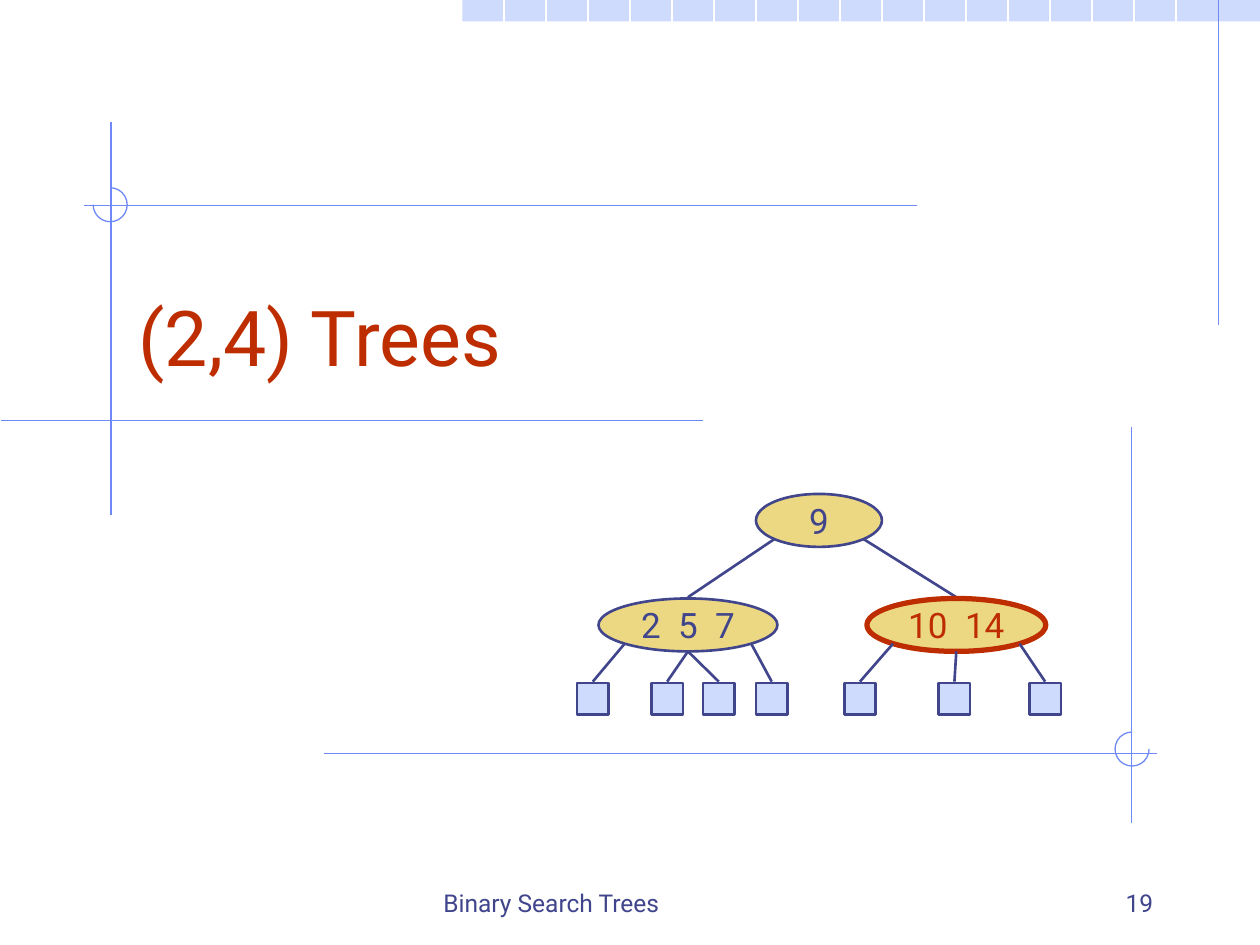
from dataclasses import dataclass
from math import cos, pi, sin

from lxml.etree import SubElement
from pptx import Presentation
from pptx.dml.color import RGBColor
from pptx.enum.shapes import MSO_CONNECTOR, MSO_SHAPE
from pptx.enum.text import MSO_ANCHOR, MSO_AUTO_SIZE, PP_ALIGN
from pptx.oxml.ns import qn
from pptx.shapes.autoshape import Shape
from pptx.slide import Slide
from pptx.text.text import Font
from pptx.util import Inches, Pt

FONT = "Roboto"
INK = "40458C"
RED = "BE2D00"
GOLD = "ECD882"
PALE = "CFDBFD"
BLUE = "6F89F7"
WHITE = "FFFFFF"
SLIDE_WIDTH = 10
SLIDE_HEIGHT = 7.5
GRID = 1 / 3
NODE_HEIGHT = 0.42
LEAF_SIZE = 0.25
LEAF_TOP = 5.42
LINK_GAP = 0.01


@dataclass
class Leaf:
    left: float
    side: int


@dataclass
class Node:
    keys: list[str]
    left: float
    top: float
    width: float
    leaves: list[Leaf]
    color: str = INK
    weight: float = 1.5

    @property
    def center(self) -> float:
        return self.left + self.width / 2

    def site(self, side: int) -> tuple[float, float]:
        angle = pi / 2 - side * pi / 4
        return (self.center + self.width / 2 * cos(angle),
                self.top + NODE_HEIGHT / 2 * (1 + sin(angle)))


@dataclass
class Rule:
    x1: float
    y1: float
    x2: float
    y2: float


@dataclass
class Arc:
    left: float
    top: float
    start: float
    end: float


@dataclass
class Footer:
    text: str
    left: float
    width: float
    align: PP_ALIGN


ROOT = Node(["9"], 6, 3.92, 1, [])
LEFT = Node(["2", "5", "7"], 4.75, 4.75, 1.42,
            [Leaf(4.58, -1), Leaf(5.17, 0), Leaf(5.58, 0), Leaf(6, 1)])
RIGHT = Node(["10", "14"], 6.88, 4.75, 1.42,
             [Leaf(6.7, -1), Leaf(7.45, 0), Leaf(8.17, 1)], RED, 3)
RULES = [
    Rule(9.67, 0, 9.67, 2.58),
    Rule(0.88, 0.97, 0.88, 4.09),
    Rule(5.58, 3.34, 0.01, 3.34),
    Rule(7.28, 1.63, 0.67, 1.63),
    Rule(2.57, 5.98, 9.18, 5.98),
    Rule(8.98, 3.39, 8.98, 6.53),
]
ARCS = [Arc(0.74, 1.49, 162, 108), Arc(8.85, 5.81, 0, 162)]
FOOTERS = [
    Footer("Binary Search Trees", 3.42, 3.17, PP_ALIGN.LEFT),
    Footer("19", 7.17, 2.08, PP_ALIGN.RIGHT),
]


def rgb(value: str) -> RGBColor:
    return RGBColor.from_string(value)


def style_font(font: Font, size: float, color: str) -> None:
    font.name = FONT
    font.size = Pt(size)
    font.color.rgb = rgb(color)


def add_line(s: Slide, rule: Rule, color: str, weight: float) -> None:
    ln = s.shapes.add_connector(
        MSO_CONNECTOR.STRAIGHT, Inches(rule.x1), Inches(rule.y1),
        Inches(rule.x2), Inches(rule.y2))
    ln.line.color.rgb = rgb(color)
    ln.line.width = Pt(weight)
    SubElement(ln._element.spPr, qn("a:effectLst"))


def add_shape(s: Slide, kind: MSO_SHAPE, left: float, top: float,
              width: float, height: float, fill: str | None,
              line: str | None, weight: float = 1.5) -> Shape:
    sp = s.shapes.add_shape(kind, Inches(left), Inches(top),
                            Inches(width), Inches(height))
    sp.shadow.inherit = False
    if fill:
        sp.fill.solid()
        sp.fill.fore_color.rgb = rgb(fill)
    else:
        sp.fill.background()
    if line:
        sp.line.color.rgb = rgb(line)
        sp.line.width = Pt(weight)
    else:
        sp.line.fill.background()
    return sp


def add_frame(s: Slide) -> None:
    add_shape(s, MSO_SHAPE.RECTANGLE, 3.67, 0, 6.33, 0.17, PALE, None)
    for column in range(12, 29):
        x = column * GRID
        add_line(s, Rule(x, 0, x, SLIDE_HEIGHT), WHITE, 0.75)
    for rule in RULES:
        add_line(s, rule, BLUE, 0.75)
    for arc in ARCS:
        sp = add_shape(s, MSO_SHAPE.ARC, arc.left, arc.top, 0.27, 0.27,
                       None, BLUE, 0.75)
        sp.adjustments[0] = arc.start
        sp.adjustments[1] = arc.end


def add_title(s: Slide, text: str) -> None:
    sp = s.shapes.title
    sp.left, sp.top = Inches(1), Inches(1.83)
    sp.width, sp.height = Inches(8.5), Inches(1.25)
    tf = sp.text_frame
    tf.text = text
    tf.auto_size = MSO_AUTO_SIZE.NONE
    tf.vertical_anchor = MSO_ANCHOR.BOTTOM
    p = tf.paragraphs[0]
    p.alignment = PP_ALIGN.LEFT
    style_font(p.runs[0].font, 44, RED)


def add_footer(s: Slide, footer: Footer) -> None:
    sp = s.shapes.add_textbox(Inches(footer.left), Inches(6.83),
                              Inches(footer.width), Inches(0.5))
    tf = sp.text_frame
    tf.word_wrap = True
    tf.vertical_anchor = MSO_ANCHOR.BOTTOM
    tf.text = footer.text
    p = tf.paragraphs[0]
    p.alignment = footer.align
    style_font(p.runs[0].font, 14, INK)


def add_node(s: Slide, node: Node) -> None:
    sp = add_shape(s, MSO_SHAPE.OVAL, node.left, node.top, node.width,
                   NODE_HEIGHT, GOLD, node.color, node.weight)
    tf = sp.text_frame
    tf.word_wrap = False
    tf.vertical_anchor = MSO_ANCHOR.MIDDLE
    p = tf.paragraphs[0]
    p.alignment = PP_ALIGN.CENTER
    for i, key in enumerate(node.keys):
        if i:
            gap = p.add_run()
            gap.text = " "
            style_font(gap.font, 20, node.color)
            gap._r.get_or_add_rPr().set("spc", "500")
        r = p.add_run()
        r.text = key
        style_font(r.font, 20, node.color)
    for leaf in node.leaves:
        add_shape(s, MSO_SHAPE.RECTANGLE, leaf.left, LEAF_TOP,
                  LEAF_SIZE, LEAF_SIZE, PALE, INK)
        add_line(s, Rule(leaf.left + LEAF_SIZE / 2, LEAF_TOP - LINK_GAP,
                         *node.site(leaf.side)), INK, 1.5)


def main() -> None:
    prs = Presentation()
    prs.slide_width, prs.slide_height = Inches(SLIDE_WIDTH), Inches(SLIDE_HEIGHT)
    s = prs.slides.add_slide(prs.slide_layouts[5])
    add_frame(s)
    add_title(s, "(2,4) Trees")
    for footer in FOOTERS:
        add_footer(s, footer)
    for child, side in ((LEFT, -1), (RIGHT, 1)):
        add_line(s, Rule(child.center, child.top - LINK_GAP,
                         *ROOT.site(side)), INK, 1.5)
    for node in (ROOT, LEFT, RIGHT):
        add_node(s, node)
    prs.save("out.pptx")


if __name__ == "__main__":
    main()
